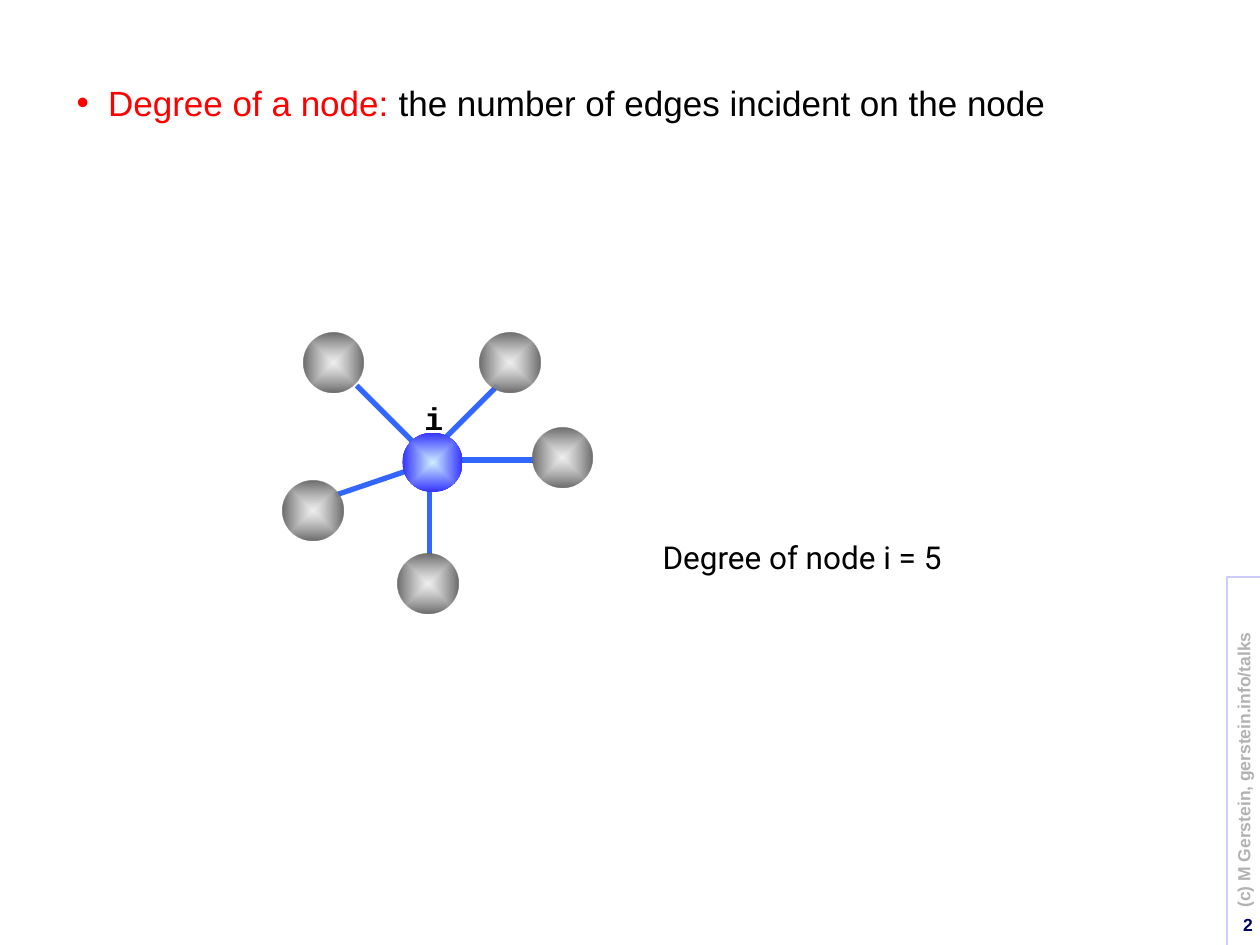
from lxml.etree import SubElement
from pptx import Presentation
from pptx.dml.color import RGBColor
from pptx.enum.shapes import MSO_CONNECTOR, MSO_SHAPE
from pptx.enum.text import PP_ALIGN
from pptx.oxml.ns import qn
from pptx.util import Pt

RED = RGBColor(0xFF, 0x00, 0x00)
BLACK = RGBColor(0x00, 0x00, 0x00)
NAVY = RGBColor(0x00, 0x00, 0x66)
FOOTER_GRAY = RGBColor(0xB2, 0xB2, 0xB2)
FRAME_LILAC = RGBColor(0xCC, 0xCC, 0xFF)
EDGE_BLUE = RGBColor(0x33, 0x66, 0xFF)
HUB_COLORS = (RGBColor(0xCC, 0xEC, 0xFF), RGBColor(0x33, 0x33, 0xFF))
NEIGHBOR_COLORS = (RGBColor(0xEA, 0xEA, 0xEA), RGBColor(0x6C, 0x6C, 0x6C))

DEFINITION = [("Degree of a node: ", RED), ("the number of edges incident on the node", BLACK)]
HUB = (247.2, 264.2)
NEIGHBORS = [
    {"center": (244.5, 333.4), "edge": ((245.5, 280.8), (245.5, 318.2))},
    {"center": (190.6, 207.4), "edge": ((236.9, 253.4), (203.8, 220.3))},
    {"center": (291.4, 207.4), "edge": ((251.3, 253.4), (284.4, 220.3))},
    {"center": (321.4, 261.6), "edge": ((263.5, 262.8), (305.3, 262.8))},
    {"center": (178.8, 291.6), "edge": ((234, 268.6), (191.5, 283))},
]
NODE_WIDTH, NODE_HEIGHT = 34.5, 34


def add_text(slide, box, runs, size, font, bold=False, wrap=False, left_inset=7.2):
    shape = slide.shapes.add_textbox(*map(Pt, box))
    frame = shape.text_frame
    frame.word_wrap = wrap
    frame.margin_left = Pt(left_inset)
    paragraph = frame.paragraphs[0]
    for text, color in runs:
        run = paragraph.add_run()
        run.text = text
        run.font.size = Pt(size)
        run.font.name = font
        run.font.bold = bold
        run.font.color.rgb = color
    return shape


def add_bullet(paragraph, indent, color):
    properties = paragraph._p.get_or_add_pPr()
    properties.set("marL", str(Pt(indent)))
    properties.set("indent", str(-Pt(indent)))
    bullet_color = SubElement(properties, qn("a:buClr"))
    SubElement(bullet_color, qn("a:srgbClr"), val=str(color))
    SubElement(properties, qn("a:buFont"), typeface="Arial")
    SubElement(properties, qn("a:buChar"), char="•")


def add_edge(slide, start, end):
    line = slide.shapes.add_connector(MSO_CONNECTOR.STRAIGHT, *map(Pt, start + end))
    line.line.color.rgb = EDGE_BLUE
    line.line.width = Pt(3)
    SubElement(line.element.spPr, qn("a:effectLst"))


def add_node(slide, center, colors, center_alpha=100):
    left, top = center[0] - NODE_WIDTH / 2, center[1] - NODE_HEIGHT / 2
    node = slide.shapes.add_shape(
        MSO_SHAPE.OVAL, Pt(left), Pt(top), Pt(NODE_WIDTH), Pt(NODE_HEIGHT))
    node.shadow.inherit = False
    node.line.fill.background()
    node.fill.gradient()
    for stop, color in zip(node.fill.gradient_stops, colors):
        stop.color.rgb = color
    gradient = node.element.spPr.find(qn("a:gradFill"))
    gradient.remove(gradient.find(qn("a:lin")))
    if center_alpha < 100:
        inner_color = gradient.find(".//" + qn("a:srgbClr"))
        SubElement(inner_color, qn("a:alpha"), val=str(center_alpha * 1000))
    outline = SubElement(gradient, qn("a:path"), path="shape")
    SubElement(outline, qn("a:fillToRect"), l="50000", t="50000", r="50000", b="50000")


def add_footer(slide):
    credit = add_text(slide, (596.9, 417.6, 226, 18),
                      [("(c) M Gerstein, gerstein.info/talks", FOOTER_GRAY)],
                      10, "Arial", bold=True, wrap=True, left_inset=21)
    credit.rotation = 270
    number = add_text(slide, (693, 519, 30, 19.4), [("2", NAVY)],
                      10, "Arial", bold=True, wrap=True)
    number.text_frame.paragraphs[0].alignment = PP_ALIGN.RIGHT
    frame = slide.shapes.add_shape(MSO_SHAPE.RECTANGLE, Pt(701.3), Pt(329.8), Pt(48), Pt(229))
    frame.shadow.inherit = False
    frame.fill.background()
    frame.line.color.rgb = FRAME_LILAC
    frame.line.width = Pt(1)


def main():
    presentation = Presentation()
    presentation.slide_width, presentation.slide_height = Pt(720), Pt(540)
    slide = presentation.slides.add_slide(presentation.slide_layouts[6])
    add_footer(slide)

    definition = add_text(slide, (36.7, 43.2, 635.8, 85), DEFINITION, 20, "Arial", wrap=True)
    paragraph = definition.text_frame.paragraphs[0]
    paragraph.space_before = Pt(4)
    add_bullet(paragraph, 18, RED)

    for neighbor in NEIGHBORS:
        add_edge(slide, *neighbor["edge"])
    add_node(slide, HUB, HUB_COLORS)
    for neighbor in NEIGHBORS:
        add_node(slide, neighbor["center"], NEIGHBOR_COLORS, center_alpha=74)

    add_text(slide, (235.4, 224.6, 25.2, 28.8), [("i", BLACK)], 18, "Courier New", bold=True)
    add_text(slide, (371.5, 303.8, 181.4, 28.8), [("Degree of node i = 5", BLACK)], 18, "Roboto")
    presentation.save("out.pptx")


if __name__ == "__main__":
    main()
